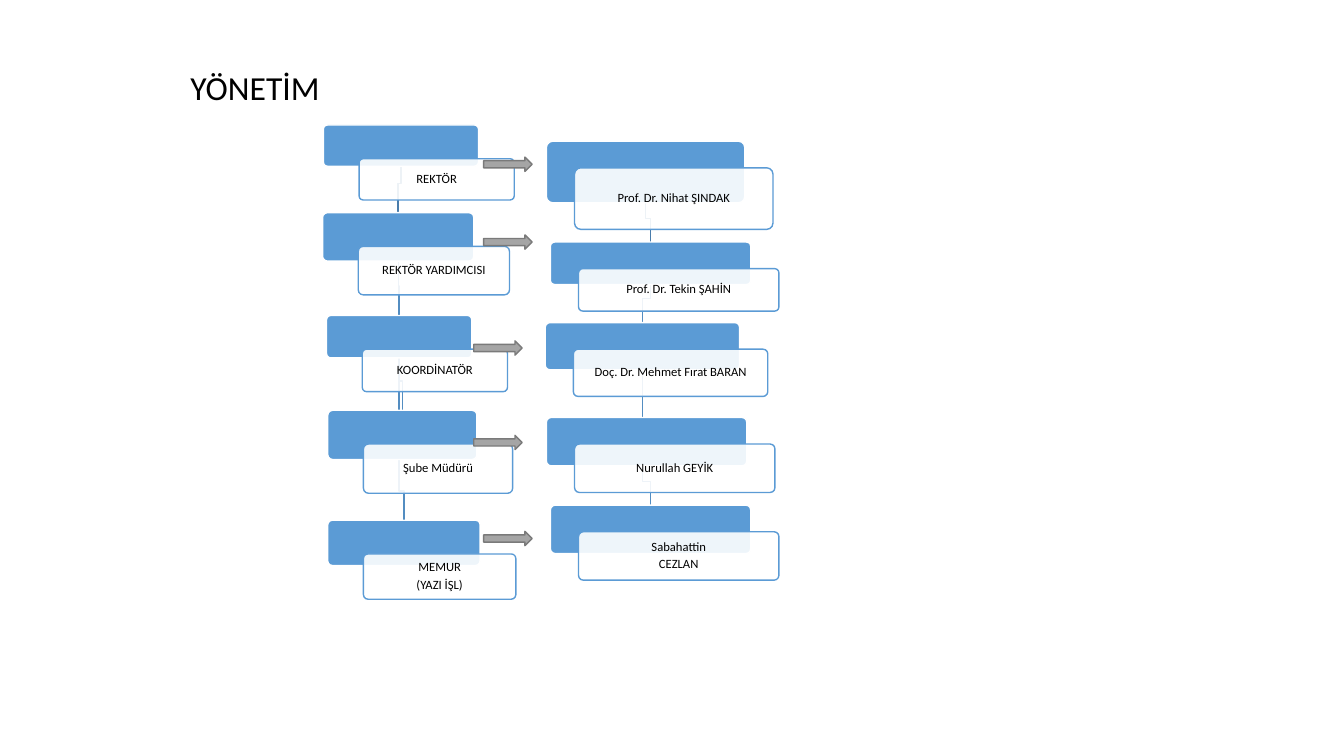
from dataclasses import dataclass
from itertools import chain
from typing import Any, NamedTuple

from lxml.etree import SubElement
from pptx import Presentation
from pptx.dml.color import RGBColor
from pptx.enum.shapes import MSO_SHAPE
from pptx.enum.text import MSO_ANCHOR, MSO_AUTO_SIZE, PP_ALIGN
from pptx.oxml.ns import qn
from pptx.shapes.autoshape import Shape
from pptx.slide import Slide
from pptx.text.text import TextFrame
from pptx.util import Cm, Pt


@dataclass(frozen=True)
class Theme:
    font: str = "Calibri"
    title_size: int = 24
    label_size: int = 9
    line_width: int = 1
    text: str = "000000"
    card: str = "5B9BD5"
    paper: str = "FFFFFF"
    paper_opacity: int = 90
    first_link: str = "497CAB"
    link: str = "538DC1"
    arrow: str = "A5A5A5"
    arrow_edge: str = "7A7A7A"


THEME = Theme()


class Box(NamedTuple):
    """A place on the slide in centimetres."""
    left: float
    top: float
    width: float
    height: float

    def shifted(self, right: float, down: float) -> "Box":
        return self._replace(left=self.left + right, top=self.top + down)


class Post(NamedTuple):
    lines: tuple[str, ...]
    back: Box


class Link(NamedTuple):
    parent: int
    child: int
    color: str = THEME.link


@dataclass(frozen=True)
class Chart:
    """A column of posts; each label lies shifted over its back card."""
    posts: tuple[Post, ...]
    links: tuple[Link, ...]
    shift: tuple[float, float]
    bend: float  # height of the elbow above the child card


TITLE_BOX = Box(4.55, 1.57, 25.83, 1.27)

DUTIES = Chart(
    posts=(
        Post(("REKTÖR",), Box(8.15, 3.15, 3.91, 1.04)),
        Post(("REKTÖR YARDIMCISI",), Box(8.13, 5.36, 3.81, 1.22)),
        Post(("KOORDİNATÖR",), Box(8.23, 7.95, 3.66, 1.07)),
        Post(("Şube Müdürü",), Box(8.26, 10.34, 3.76, 1.24)),
        Post(("MEMUR", "(YAZI İŞL)"), Box(8.26, 13.11, 3.84, 1.14)),
    ),
    links=(Link(2, 3), Link(2, 4), Link(1, 2), Link(0, 1, THEME.first_link)),
    shift=(0.9, 0.85),
    bend=0.74,
)

PEOPLE = Chart(
    posts=(
        Post(("Prof. Dr. Nihat ŞINDAK",), Box(13.77, 3.56, 5, 1.55)),
        Post(("Prof. Dr. Tekin ŞAHİN",), Box(13.87, 6.1, 5.05, 1.07)),
        Post(("Doç. Dr. Mehmet Fırat BARAN",), Box(13.74, 8.13, 4.9, 1.19)),
        Post(("Nurullah GEYİK",), Box(13.77, 10.52, 5.05, 1.22)),
        Post(("Sabahattin", "CEZLAN"), Box(13.87, 12.73, 5.05, 1.22)),
    ),
    links=(Link(2, 4), Link(1, 2), Link(0, 1, THEME.first_link)),
    shift=(0.71, 0.67),
    bend=0.6,
)

ARROWS = tuple(
    Box(left, top, 1.22, 0.36)
    for left, top in ((12.19, 3.96), (12.19, 5.92), (11.94, 8.59), (11.94, 10.97), (12.19, 13.39))
)

LABEL_FRAME = {
    "word_wrap": True,
    "vertical_anchor": MSO_ANCHOR.MIDDLE,
    **{f"margin_{side}": Cm(0.1) for side in ("left", "top", "right", "bottom")},
}
LABEL_PARAGRAPH = {"alignment": PP_ALIGN.CENTER, "line_spacing": 0.9, "space_after": Pt(3)}
TITLE_FRAME = {"word_wrap": True, "auto_size": MSO_AUTO_SIZE.SHAPE_TO_FIT_TEXT}


def apply(target: Any, values: dict[str, Any]) -> None:
    for name, value in values.items():
        setattr(target, name, value)


def write(frame: TextFrame, lines: tuple[str, ...], size: int,
          frame_format: dict[str, Any], paragraph_format: dict[str, Any]) -> None:
    apply(frame, frame_format)
    for index, line in enumerate(lines):
        paragraph = frame.add_paragraph() if index else frame.paragraphs[0]
        apply(paragraph, paragraph_format)
        run = paragraph.add_run()
        run.text = line
        apply(run.font, {"name": THEME.font, "size": Pt(size)})
        run.font.color.rgb = RGBColor.from_string(THEME.text)


def outline(shape: Shape, color: str) -> None:
    shape.shadow.inherit = False
    shape.line.color.rgb = RGBColor.from_string(color)
    shape.line.width = Pt(THEME.line_width)


def draw_preset(slide: Slide, preset: MSO_SHAPE, box: Box, fill: str, edge: str) -> Shape:
    shape = slide.shapes.add_shape(preset, *map(Cm, box))
    shape.fill.solid()
    shape.fill.fore_color.rgb = RGBColor.from_string(fill)
    outline(shape, edge)
    return shape


def draw_card(slide: Slide, box: Box, fill: str, edge: str) -> Shape:
    card = draw_preset(slide, MSO_SHAPE.ROUNDED_RECTANGLE, box, fill, edge)
    card.adjustments[0] = 0.1
    return card


def set_opacity(shape: Shape, percent: int) -> None:
    color = shape.fill._xPr.find(qn("a:solidFill"))[0]
    SubElement(color, qn("a:alpha")).set("val", str(percent * 1000))


def draw_post(slide: Slide, post: Post, shift: tuple[float, float]) -> None:
    draw_card(slide, post.back, THEME.card, THEME.paper)
    label = draw_card(slide, post.back.shifted(*shift), THEME.paper, THEME.card)
    set_opacity(label, THEME.paper_opacity)
    write(label.text_frame, post.lines, THEME.label_size, LABEL_FRAME, LABEL_PARAGRAPH)


def draw_link(slide: Slide, parent: Box, child: Box, bend: float, color: str) -> None:
    """Draw an elbow from the parent's bottom centre to the child's top centre."""
    start_x, end_x = (Cm(box.left + box.width / 2) for box in (parent, child))
    elbow_y = Cm(child.top - bend)
    builder = slide.shapes.build_freeform(start_x, Cm(parent.top + parent.height))
    builder.add_line_segments(
        [(start_x, elbow_y), (end_x, elbow_y), (end_x, Cm(child.top))], close=False)
    elbow = builder.convert_to_shape()
    elbow.fill.background()
    outline(elbow, color)


def draw_chart(slide: Slide, chart: Chart) -> None:
    for link in chart.links:
        parent, child = (chart.posts[index].back for index in (link.parent, link.child))
        draw_link(slide, parent, child, chart.bend, link.color)
    for post in chart.posts:
        draw_post(slide, post, chart.shift)


def main() -> None:
    deck = Presentation()
    apply(deck, {"slide_width": Cm(33.87), "slide_height": Cm(19.05)})
    slide = deck.slides.add_slide(deck.slide_layouts[6])
    heading = slide.shapes.add_textbox(*map(Cm, TITLE_BOX))
    write(heading.text_frame, ("YÖNETİM",), THEME.title_size, TITLE_FRAME, {})
    for chart in (DUTIES, PEOPLE):
        draw_chart(slide, chart)
    for box in ARROWS:
        draw_preset(slide, MSO_SHAPE.RIGHT_ARROW, box, THEME.arrow, THEME.arrow_edge)
    deck.save("out.pptx")


if __name__ == "__main__":
    main()
